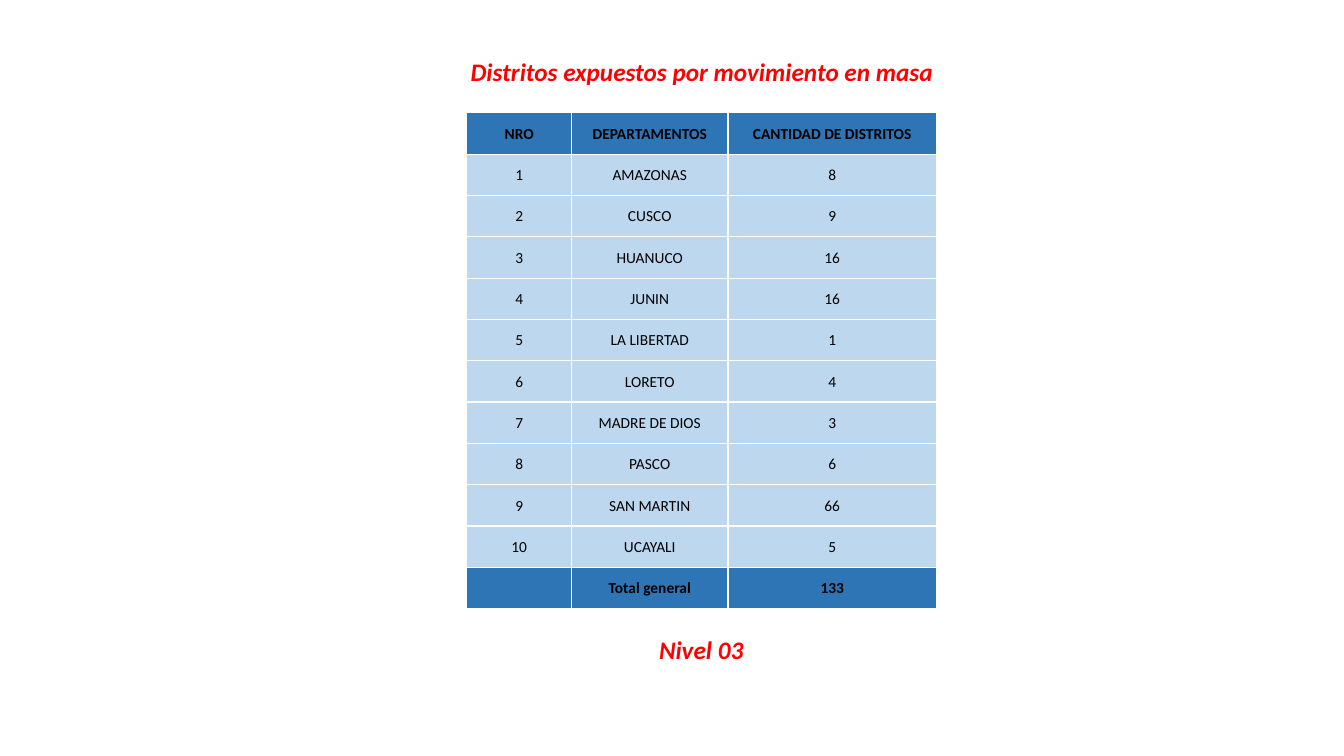
from dataclasses import dataclass

from lxml import etree
from pptx import Presentation
from pptx.dml.color import RGBColor
from pptx.enum.text import MSO_ANCHOR, MSO_AUTO_SIZE, PP_ALIGN
from pptx.oxml.ns import qn
from pptx.util import Inches, Pt

CENTER = PP_ALIGN.CENTER
TOP = MSO_ANCHOR.TOP
MIDDLE = MSO_ANCHOR.MIDDLE
GROW_SHAPE = MSO_AUTO_SIZE.SHAPE_TO_FIT_TEXT
TITLE_ONLY_LAYOUT = 5

FONT = "Calibri"
RED = "FF0000"
BLACK = "000000"
WHITE = "FFFFFF"
DARK_BLUE = "2E75B6"
LIGHT_BLUE = "BDD7EE"

COLUMN_WIDTHS = (1.04, 1.55, 2.07)
ROW_HEIGHT = 0.41
BORDER_SIDES = ("a:lnL", "a:lnR", "a:lnT", "a:lnB")


@dataclass(frozen=True)
class Heading:
    text: str
    left: float
    top: float
    width: float
    height: float
    wrap: bool


@dataclass(frozen=True)
class DistrictRow:
    number: str
    department: str
    count: str
    emphasized: bool = False


TITLE = Heading("Distritos expuestos por movimiento en masa", 4.54, 0.51, 4.84, 0.4, False)
LEVEL = Heading("Nivel 03", 6.42, 6.24, 1.07, 0.4, True)

DEPARTMENT_COUNTS = (
    ("AMAZONAS", 8),
    ("CUSCO", 9),
    ("HUANUCO", 16),
    ("JUNIN", 16),
    ("LA LIBERTAD", 1),
    ("LORETO", 4),
    ("MADRE DE DIOS", 3),
    ("PASCO", 6),
    ("SAN MARTIN", 66),
    ("UCAYALI", 5),
)
ROWS = (
    DistrictRow("NRO", "DEPARTAMENTOS", "CANTIDAD DE DISTRITOS", True),
    *(
        DistrictRow(str(number), department, str(count))
        for number, (department, count) in enumerate(DEPARTMENT_COUNTS, start=1)
    ),
    DistrictRow("", "Total general", "133", True),
)


def color(value: str) -> RGBColor:
    return RGBColor.from_string(value)


def format_text(text_frame, size: float, font_color: str, bold: bool, italic: bool) -> None:
    for paragraph in text_frame.paragraphs:
        paragraph.alignment = CENTER
        for run in paragraph.runs:
            run.font.name = FONT
            run.font.size = Pt(size)
            run.font.bold = bold
            run.font.italic = italic
            run.font.color.rgb = color(font_color)


def fill_heading(shape, heading: Heading) -> None:
    shape.left, shape.top = Inches(heading.left), Inches(heading.top)
    shape.width, shape.height = Inches(heading.width), Inches(heading.height)
    text_frame = shape.text_frame
    text_frame.text = heading.text
    text_frame.word_wrap = heading.wrap
    text_frame.auto_size = GROW_SHAPE
    text_frame.vertical_anchor = TOP
    format_text(text_frame, 18, RED, True, True)


def add_borders(cell, border_color: str, width: float) -> None:
    properties = cell._tc.get_or_add_tcPr()
    for side in BORDER_SIDES:
        line = etree.SubElement(properties, qn(side), w=str(Pt(width)))
        fill = etree.SubElement(line, qn("a:solidFill"))
        etree.SubElement(fill, qn("a:srgbClr"), val=border_color)


def fill_cell(cell, text: str, emphasized: bool) -> None:
    cell.text_frame.text = text
    cell.vertical_anchor = MIDDLE
    cell.margin_left = cell.margin_right = cell.margin_top = Inches(0.01)
    cell.margin_bottom = 0
    add_borders(cell, WHITE, 1)
    cell.fill.solid()
    cell.fill.fore_color.rgb = color(DARK_BLUE if emphasized else LIGHT_BLUE)
    format_text(cell.text_frame, 11, BLACK, emphasized, False)


def add_district_table(slide, left: float, top: float) -> None:
    table = slide.shapes.add_table(
        len(ROWS),
        len(COLUMN_WIDTHS),
        Inches(left),
        Inches(top),
        Inches(sum(COLUMN_WIDTHS)),
        Inches(ROW_HEIGHT * len(ROWS)),
    ).table
    for column, width in zip(table.columns, COLUMN_WIDTHS):
        column.width = Inches(width)
    for table_row, row in zip(table.rows, ROWS):
        table_row.height = Inches(ROW_HEIGHT)
        for cell, text in zip(table_row.cells, (row.number, row.department, row.count)):
            fill_cell(cell, text, row.emphasized)


def main() -> None:
    presentation = Presentation()
    presentation.slide_width = Inches(13.33)
    presentation.slide_height = Inches(7.5)
    slide = presentation.slides.add_slide(presentation.slide_layouts[TITLE_ONLY_LAYOUT])
    fill_heading(slide.shapes.title, TITLE)
    fill_heading(slide.shapes.add_textbox(0, 0, 0, 0), LEVEL)
    add_district_table(slide, 4.63, 1.12)
    presentation.save("out.pptx")


if __name__ == "__main__":
    main()
